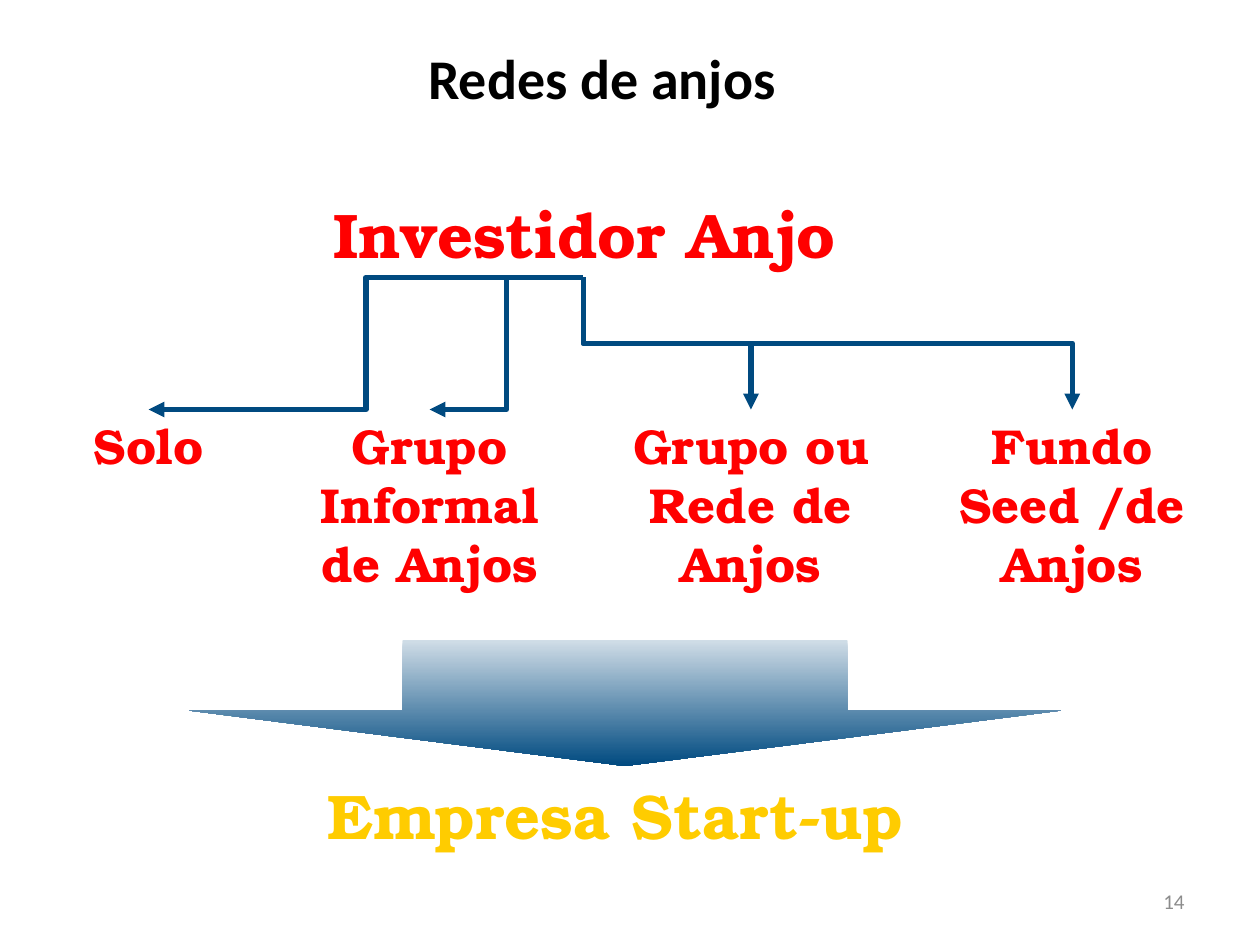
from lxml import etree
from pptx import Presentation
from pptx.dml.color import RGBColor
from pptx.enum.shapes import MSO_CONNECTOR as Connector, MSO_SHAPE as Shape
from pptx.enum.text import MSO_ANCHOR as Anchor, PP_ALIGN as Align
from pptx.oxml.ns import qn
from pptx.util import Inches, Pt

COLORS = {
    "black": "000000", "red": "FF0000", "gold": "FFCC00",
    "blue": "004A80", "pale": "D0DDE7", "gray": "8C8C8C",
}
HEADING = "Calibri"
DISPLAY = "TeX Gyre Bonum"


def color(name):
    return RGBColor.from_string(COLORS[name])


def write(shape, text, size, font, color_name, bold=True, align=Align.CENTER):
    shape.text_frame.word_wrap = True
    paragraph = shape.text_frame.paragraphs[0]
    paragraph.alignment = align
    run = paragraph.add_run()
    run.text = text
    run.font.size = Pt(size)
    run.font.name = font
    run.font.bold = bold
    run.font.color.rgb = color(color_name)


def add_label(slide, box, text, size, color_name="red"):
    label = slide.shapes.add_textbox(*map(Inches, box))
    write(label, text, size, DISPLAY, color_name)


def add_title(slide, box, text):
    title = slide.shapes.title
    title.left, title.top, title.width, title.height = map(Inches, box)
    title.text_frame.vertical_anchor = Anchor.MIDDLE
    write(title, text, 32, HEADING, "black")


def add_elbow(slide, start, end, vertical):
    """Bent arrow that leaves its start sideways, or downwards if vertical."""
    (x1, y1), (x2, y2) = start, end
    if vertical:
        # Lay out the path on its side, then turn it about its center
        center_x, center_y = (x1 + x2) / 2, (y1 + y2) / 2
        half_run, half_drop = (x2 - x1) / 2, (y2 - y1) / 2
        x1, x2 = center_x + half_drop, center_x - half_drop
        y1, y2 = center_y - half_run, center_y + half_run
    elbow = slide.shapes.add_connector(
        Connector.ELBOW, *map(Inches, (x1, y1, x2, y2)))
    properties = elbow._element.spPr
    if vertical:
        properties.find(qn("a:xfrm")).set("rot", str(270 * 60000))
    elbow.line.color.rgb = color("blue")
    elbow.line.width = Pt(3)
    line = properties.find(qn("a:ln"))
    etree.SubElement(line, qn("a:tailEnd"), type="triangle")
    etree.SubElement(properties, qn("a:effectLst"))


def add_investor_tree(slide, box):
    left, top, width, height = box
    add_label(slide, (left + 1.75, top, 4.94, 0.7), "Investidor Anjo", 36)
    root = (left + 4.21, top + 0.7)
    branch_top = top + 1.75

    # Each branch: text, center offset, width, height, leaves downwards
    branches = [
        ("Solo", 0.76, 1.52, 0.57, False),
        ("Grupo Informal de Anjos", 2.99, 2.52, 1.5, False),
        ("Grupo ou Rede de Anjos", 5.54, 2.15, 1.5, True),
        ("Fundo Seed /de Anjos", 8.09, 2.52, 1.5, True),
    ]
    for text, offset, label_width, label_height, vertical in branches:
        center = left + offset
        add_label(slide, (center - label_width / 2, branch_top,
                          label_width, label_height), text, 28)
        add_elbow(slide, root, (center, branch_top), vertical)


def add_outcome(slide, box):
    left, top, width, height = box
    arrow = slide.shapes.add_shape(
        Shape.DOWN_ARROW, *map(Inches, (left, top, width, 1)))
    arrow.adjustments[0] = 0.51
    arrow.adjustments[1] = 0.44
    arrow.shadow.inherit = False
    arrow.line.fill.background()
    arrow.fill.gradient()
    arrow.fill.gradient_angle = 270
    for stop, name, position in zip(
            arrow.fill.gradient_stops, ("pale", "blue"), (0, 1)):
        stop.color.rgb = color(name)
        stop.position = position
    add_label(slide, (left + 0.26, top + 1.03, 6.25, 0.71),
              "Empresa Start-up", 36, "gold")


def add_page_number(slide, box, text):
    number = slide.shapes.add_textbox(*map(Inches, box))
    number.text_frame.vertical_anchor = Anchor.MIDDLE
    write(number, text, 12, HEADING, "gray", bold=False, align=Align.RIGHT)


def main():
    presentation = Presentation()
    presentation.slide_width = Inches(10)
    presentation.slide_height = Inches(7.5)
    slide = presentation.slides.add_slide(presentation.slide_layouts[5])

    add_title(slide, (2.32, 0.29, 4.92, 0.64), "Redes de anjos")
    add_investor_tree(slide, (0.42, 1.5, 9.35, 3.25))
    add_outcome(slide, (1.5, 5.08, 6.92, 1.74))
    add_page_number(slide, (7.17, 6.95, 2.33, 0.4), "14")
    presentation.save("out.pptx")


if __name__ == "__main__":
    main()
